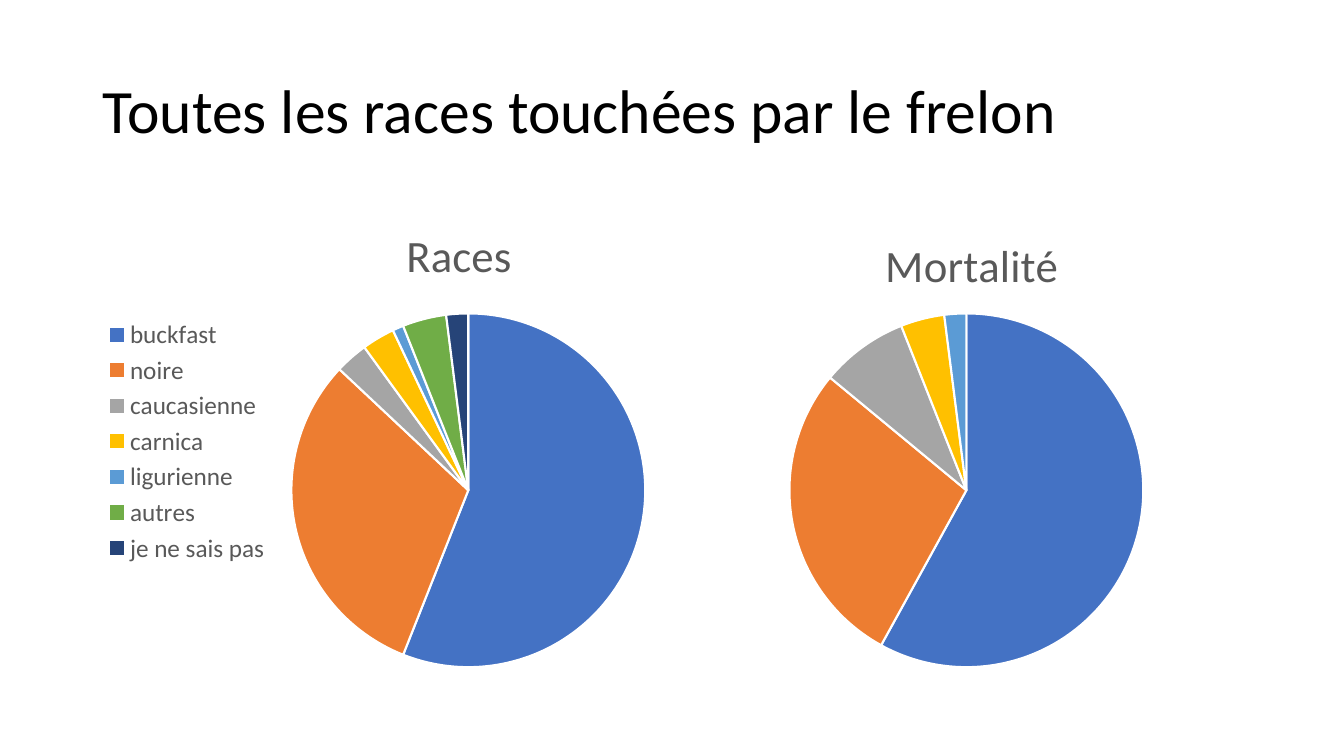
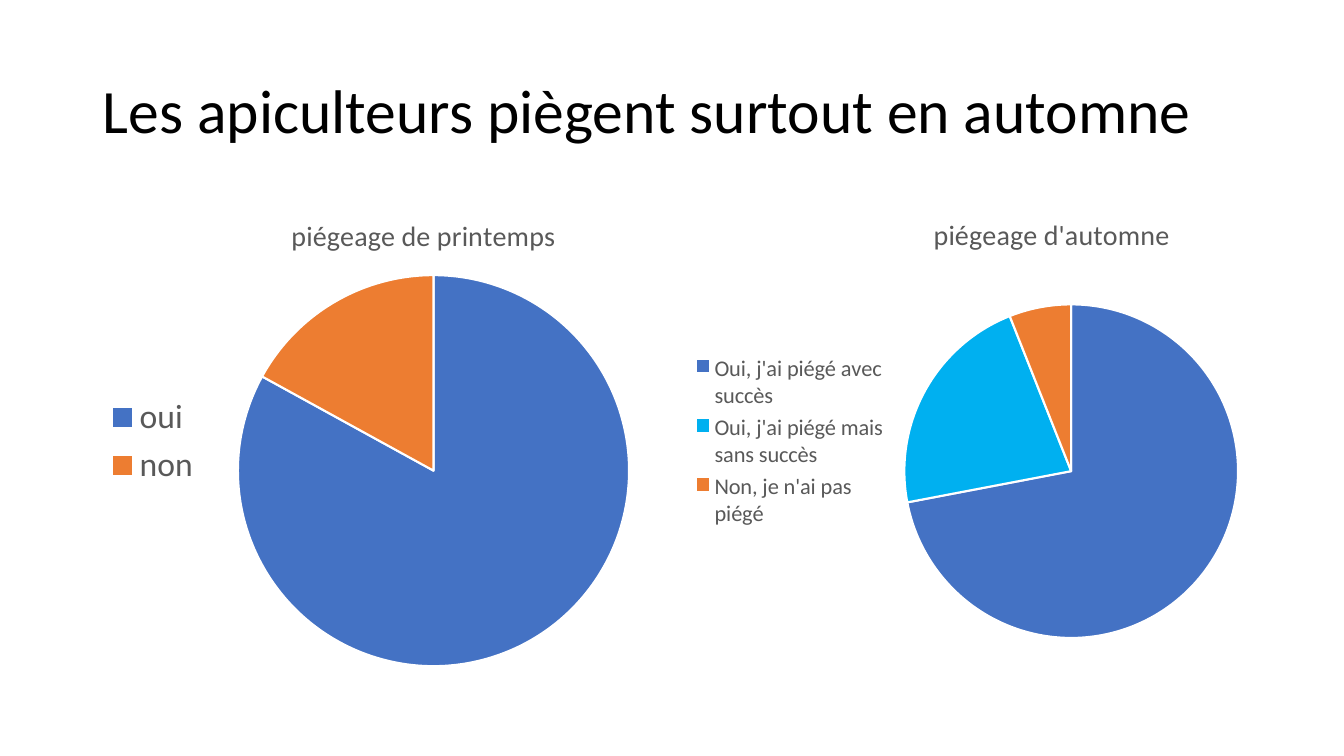
from lxml.etree import SubElement
from pptx import Presentation
from pptx.chart.data import CategoryChartData
from pptx.dml.color import RGBColor
from pptx.enum.chart import XL_CHART_TYPE, XL_LEGEND_POSITION
from pptx.enum.text import MSO_ANCHOR, MSO_AUTO_SIZE, PP_ALIGN
from pptx.oxml.ns import qn
from pptx.util import Inches, Pt

FONT = "Calibri"
BLACK, WHITE, GREY = "000000", "FFFFFF", "595959"
BLUE, ORANGE, SKY = "4472C4", "ED7D31", "00B0F0"
RACE_COLORS = [BLUE, ORANGE, "A5A5A5", "FFC000", "5B9BD5", "70AD47", "264478"]
RACES = ["buckfast", "noire", "caucasienne", "carnica", "ligurienne", "autres", "je ne sais pas"]

# Boxes are left, top, width, height in inches
TITLE_BOX = (0.92, 0.4, 11.5, 1.45)
CHART_BOXES = [(0.92, 2, 5.67, 4.76), (6.75, 2, 5.67, 4.76)]

# "pie" is left, top, diameter and "title_at" is left, top, within the chart box
SLIDES = [
    ("Toutes les races touchées par le frelon", [
        dict(title="Races", title_size=32, title_at=(3.03, 0.14), pie=(1.97, 1.11, 3.51),
             categories=RACES, values=[56, 31, 3, 3, 1, 4, 2], colors=RACE_COLORS, legend_size=18),
        dict(title="Mortalité", title_size=32, title_at=(1.95, 0.24), pie=(1.08, 1.11, 3.51),
             categories=["1", "2", "3", "4", "5", "6", "7"], values=[58, 28, 8, 4, 2, 0, 0],
             colors=RACE_COLORS),
    ]),
    ("Les apiculteurs piègent surtout en automne", [
        dict(title="piégeage de printemps", title_size=20, title_at=(1.92, 0.09),
             pie=(1.44, 0.73, 3.88), categories=["oui", "non"], values=[83, 17],
             colors=[BLUE, ORANGE], legend_size=24),
        dict(title="piégeage d'automne", title_size=20, title_at=(2.46, 0.08),
             pie=(2.22, 1.02, 3.31),
             categories=["Oui, j'ai piégé avec succès", "Oui, j'ai piégé mais sans succès",
                         "Non, je n'ai pas piégé"],
             values=[72, 22, 6], colors=[BLUE, SKY, ORANGE], legend_size=16),
    ]),
]


def rgb(color):
    return RGBColor.from_string(color)


def set_font(font, size, color):
    font.name, font.size, font.bold = FONT, Pt(size), False
    font.color.rgb = rgb(color)


def set_layout(element, index, settings):
    """Give a chart part a manual layout, as its child number index."""
    for previous in element.findall(qn("c:layout")):
        element.remove(previous)
    layout = SubElement(element, qn("c:layout"))
    element.insert(index, layout)
    manual = SubElement(layout, qn("c:manualLayout"))
    for name, value in settings.items():
        SubElement(manual, qn(f"c:{name}")).set("val", str(value))


def add_title(slide, text, box):
    title = slide.shapes.title
    title.left, title.top, title.width, title.height = map(Inches, box)
    frame = title.text_frame
    frame.text = text
    frame.vertical_anchor = MSO_ANCHOR.MIDDLE
    frame.auto_size = MSO_AUTO_SIZE.NONE
    paragraph = frame.paragraphs[0]
    paragraph.alignment = PP_ALIGN.LEFT
    paragraph.line_spacing = 0.9
    set_font(paragraph.font, 44, BLACK)


def add_pie(slide, box, title, title_size, title_at, pie, categories, values, colors,
            legend_size=None):
    width, height = box[2:]
    data = CategoryChartData()
    data.categories = categories
    data.add_series("Series 1", values)
    chart = slide.shapes.add_chart(XL_CHART_TYPE.PIE, *map(Inches, box), data).chart
    set_font(chart.font, 10, BLACK)

    # Title
    chart.has_title = True
    chart.chart_title.text_frame.text = title
    set_font(chart.chart_title.text_frame.paragraphs[0].font, title_size, GREY)
    chart.chart_title.include_in_layout = False
    left, top = title_at
    set_layout(chart.chart_title._element, 1,
               dict(xMode="edge", yMode="edge", x=left / width, y=top / height))

    # Legend
    chart.has_legend = legend_size is not None
    if chart.has_legend:
        chart.legend.position = XL_LEGEND_POSITION.LEFT
        chart.legend.include_in_layout = False
        set_font(chart.legend.font, legend_size, GREY)

    # Slices
    plot = chart.plots[0]
    plot.vary_by_categories = True
    for index, color in enumerate(colors):
        slice_format = plot.series[0].points[index].format
        slice_format.fill.solid()
        slice_format.fill.fore_color.rgb = rgb(color)
        slice_format.line.color.rgb = rgb(WHITE)
        slice_format.line.width = Pt(1.5)
    left, top, diameter = pie
    set_layout(plot._element.getparent(), 0,
               dict(layoutTarget="inner", xMode="edge", yMode="edge", x=left / width,
                    y=top / height, w=diameter / width, h=diameter / height))


def main():
    presentation = Presentation()
    presentation.slide_width, presentation.slide_height = Inches(13.33), Inches(7.5)
    title_only = presentation.slide_layouts[5]
    for heading, pies in SLIDES:
        slide = presentation.slides.add_slide(title_only)
        add_title(slide, heading, TITLE_BOX)
        for box, settings in zip(CHART_BOXES, pies):
            add_pie(slide, box, **settings)
    presentation.save("out.pptx")


if __name__ == "__main__":
    main()
